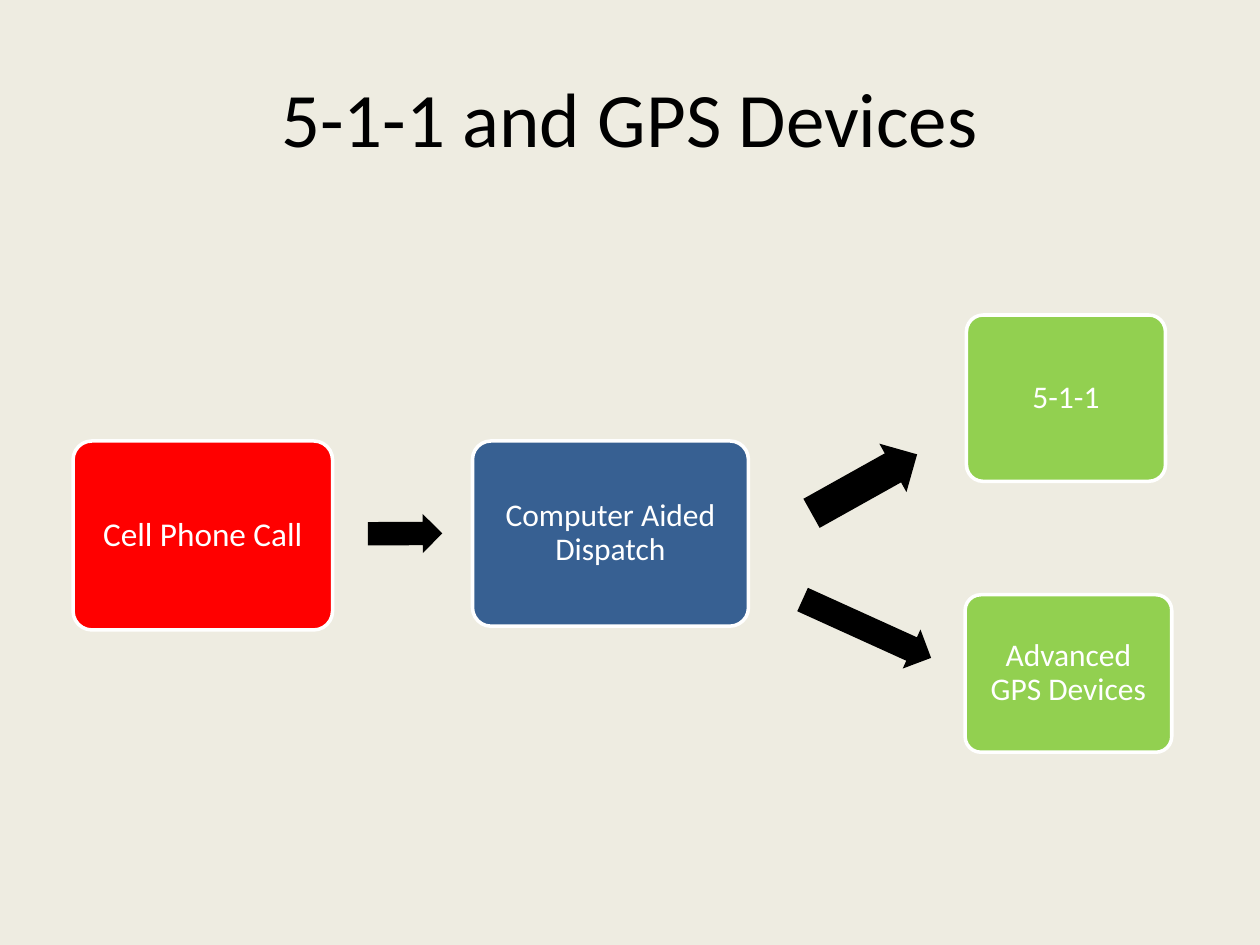
import pptx
import pptx.util
import pptx.dml.color
import pptx.enum.shapes
import pptx.enum.text

Inches = pptx.util.Inches
WHITE = "FFFFFF"
BLACK = "000000"
GREEN = "92D050"


def color(hex_string):
    return pptx.dml.color.RGBColor.from_string(hex_string)


def set_fill(target, hex_string):
    target.fill.solid()
    target.fill.fore_color.rgb = color(hex_string)


def write_text(shape, text, size, hex_string):
    frame = shape.text_frame
    frame.word_wrap = True
    frame.vertical_anchor = pptx.enum.text.MSO_ANCHOR.MIDDLE
    paragraph = frame.paragraphs[0]
    paragraph.alignment = pptx.enum.text.PP_ALIGN.CENTER
    run = paragraph.add_run()
    run.text = text
    run.font.name = "Calibri"
    run.font.size = pptx.util.Pt(size)
    run.font.color.rgb = color(hex_string)
    return frame


def add_title(slide, text):
    title = slide.shapes.add_textbox(Inches(0.5), Inches(0.3), Inches(9), Inches(1.25))
    write_text(title, text, 44, BLACK)


def add_filled_shape(slide, kind, bounds, fill):
    shape = slide.shapes.add_shape(kind, *map(Inches, bounds))
    shape.shadow.inherit = False
    set_fill(shape, fill)
    return shape


def add_step(slide, text, bounds, fill, size=18):
    step = add_filled_shape(
        slide, pptx.enum.shapes.MSO_SHAPE.ROUNDED_RECTANGLE, bounds, fill)
    step.adjustments[0] = 0.1
    step.line.color.rgb = color(WHITE)
    step.line.width = pptx.util.Pt(2)
    frame = write_text(step, text, size, WHITE)
    frame.paragraphs[0].line_spacing = 0.9
    frame.margin_left = frame.margin_right = Inches(0.07)
    frame.margin_top = frame.margin_bottom = Inches(0.07)


def add_arrow(slide, bounds, rotation):
    arrow = add_filled_shape(
        slide, pptx.enum.shapes.MSO_SHAPE.RIGHT_ARROW, bounds, BLACK)
    arrow.adjustments[0] = 0.6
    arrow.adjustments[1] = 0.5
    arrow.line.fill.background()
    arrow.rotation = rotation


def main():
    presentation = pptx.Presentation()
    presentation.slide_width = Inches(10)
    presentation.slide_height = Inches(7.5)
    slide = presentation.slides.add_slide(presentation.slide_layouts[6])
    set_fill(slide.background, "EEECE1")

    add_title(slide, "5-1-1 and GPS Devices")
    add_step(slide, "Cell Phone Call", (0.58, 3.5, 2.06, 1.5), "FF0000", 19)
    add_arrow(slide, (2.92, 4.08, 0.59, 0.31), 359.7)
    add_step(slide, "Computer Aided Dispatch", (3.75, 3.5, 2.19, 1.47), "376092")
    add_arrow(slide, (6.32, 4.82, 1.12, 0.34), 24.4)
    add_step(slide, "Advanced GPS Devices", (7.66, 4.72, 1.64, 1.25), GREEN)
    add_arrow(slide, (6.38, 3.62, 0.96, 0.44), 330.8)
    add_step(slide, "5-1-1", (7.67, 2.5, 1.58, 1.32), GREEN)

    presentation.save("out.pptx")


if __name__ == "__main__":
    main()
